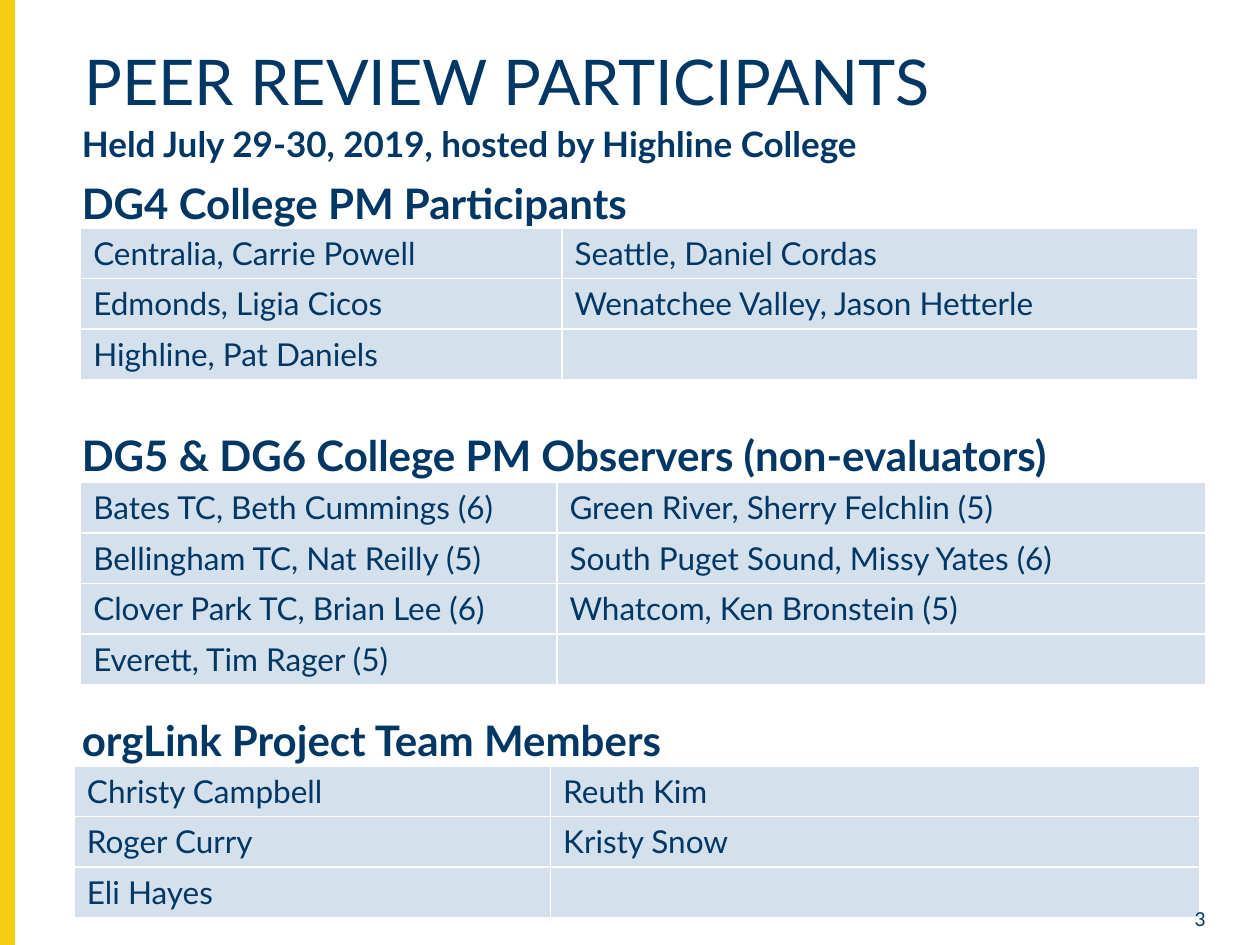
import pptx
import pptx.util
import pptx.dml.color
import pptx.enum.shapes
import pptx.enum.text

Inches = pptx.util.Inches
NAVY = pptx.dml.color.RGBColor(0x00, 0x37, 0x64)
GOLD = pptx.dml.color.RGBColor(0xF4, 0xCE, 0x12)
PALE_BLUE = pptx.dml.color.RGBColor(0xD4, 0xE0, 0xEC)
FONT = "Lato"
ROW_HEIGHT = 0.4
HEADING_HEIGHT = 0.4

SECTIONS = [
    ("DG4 College PM Participants", 1.61, (0.64, 1.81), (3.82, 5.05), [
        ("Centralia, Carrie Powell", "Seattle, Daniel Cordas"),
        ("Edmonds, Ligia Cicos", "Wenatchee Valley, Jason Hetterle"),
        ("Highline, Pat Daniels", ""),
    ]),
    ("DG5 & DG6 College PM Observers (non-evaluators)", 3.61, (0.64, 3.83), (3.78, 5.15), [
        ("Bates TC, Beth Cummings (6)", "Green River, Sherry Felchlin (5)"),
        ("Bellingham TC, Nat Reilly (5)", "South Puget Sound, Missy Yates (6)"),
        ("Clover Park TC, Brian Lee (6)", "Whatcom, Ken Bronstein (5)"),
        ("Everett, Tim Rager (5)", ""),
    ]),
    ("orgLink Project Team Members", 5.87, (0.59, 6.08), (3.78, 5.15), [
        ("Christy Campbell", "Reuth Kim"),
        ("Roger Curry", "Kristy Snow"),
        ("Eli Hayes", ""),
    ]),
]


def write_text(frame, text, size, bold=False):
    paragraph = frame.paragraphs[0]
    paragraph.text = text
    paragraph.font.name = FONT
    paragraph.font.size = pptx.util.Pt(size)
    paragraph.font.bold = bold
    paragraph.font.color.rgb = NAVY
    return paragraph


def add_text(page, text, left, middle, width, height, size, bold=False):
    box = page.shapes.add_textbox(
        Inches(left), Inches(middle - height / 2), Inches(width), Inches(height))
    frame = box.text_frame
    frame.word_wrap = True
    frame.vertical_anchor = pptx.enum.text.MSO_ANCHOR.MIDDLE
    frame.margin_left = frame.margin_right = 0
    frame.margin_top = frame.margin_bottom = 0
    return write_text(frame, text, size, bold)


def add_side_bar(page):
    bar = page.shapes.add_shape(
        pptx.enum.shapes.MSO_SHAPE.RECTANGLE, 0, 0, Inches(0.11), Inches(7.5))
    bar.shadow.inherit = False
    bar.fill.solid()
    bar.fill.fore_color.rgb = GOLD
    bar.line.color.rgb = GOLD
    bar.line.width = pptx.util.Pt(1)


def add_people_table(page, position, widths, rows):
    left, top = position
    table = page.shapes.add_table(
        len(rows), len(widths), Inches(left), Inches(top),
        Inches(sum(widths)), Inches(ROW_HEIGHT * len(rows))).table
    table.first_row = False
    table.horz_banding = False
    for column, width in zip(table.columns, widths):
        column.width = Inches(width)
    for row, people in zip(table.rows, rows):
        row.height = Inches(ROW_HEIGHT)
        for cell, person in zip(row.cells, people):
            cell.fill.solid()
            cell.fill.fore_color.rgb = PALE_BLUE
            write_text(cell.text_frame, person, 18)


def main():
    deck = pptx.Presentation()
    deck.slide_width = Inches(10)
    deck.slide_height = Inches(7.5)
    page = deck.slides.add_slide(deck.slide_layouts[6])

    add_side_bar(page)
    add_text(page, "PEER REVIEW PARTICIPANTS", 0.67, 0.64, 8.9, 0.61, 36)
    add_text(page, "Held July 29-30, 2019, hosted by Highline College",
             0.65, 1.14, 8.9, HEADING_HEIGHT, 20, bold=True)
    for heading, middle, position, widths, rows in SECTIONS:
        add_text(page, heading, 0.65, middle, 8.9, HEADING_HEIGHT, 24, bold=True)
        add_people_table(page, position, widths, rows)
    number = add_text(page, "3", 9.2, 7.29, 0.37, 0.21, 11)
    number.alignment = pptx.enum.text.PP_ALIGN.RIGHT

    deck.save("out.pptx")


if __name__ == "__main__":
    main()
